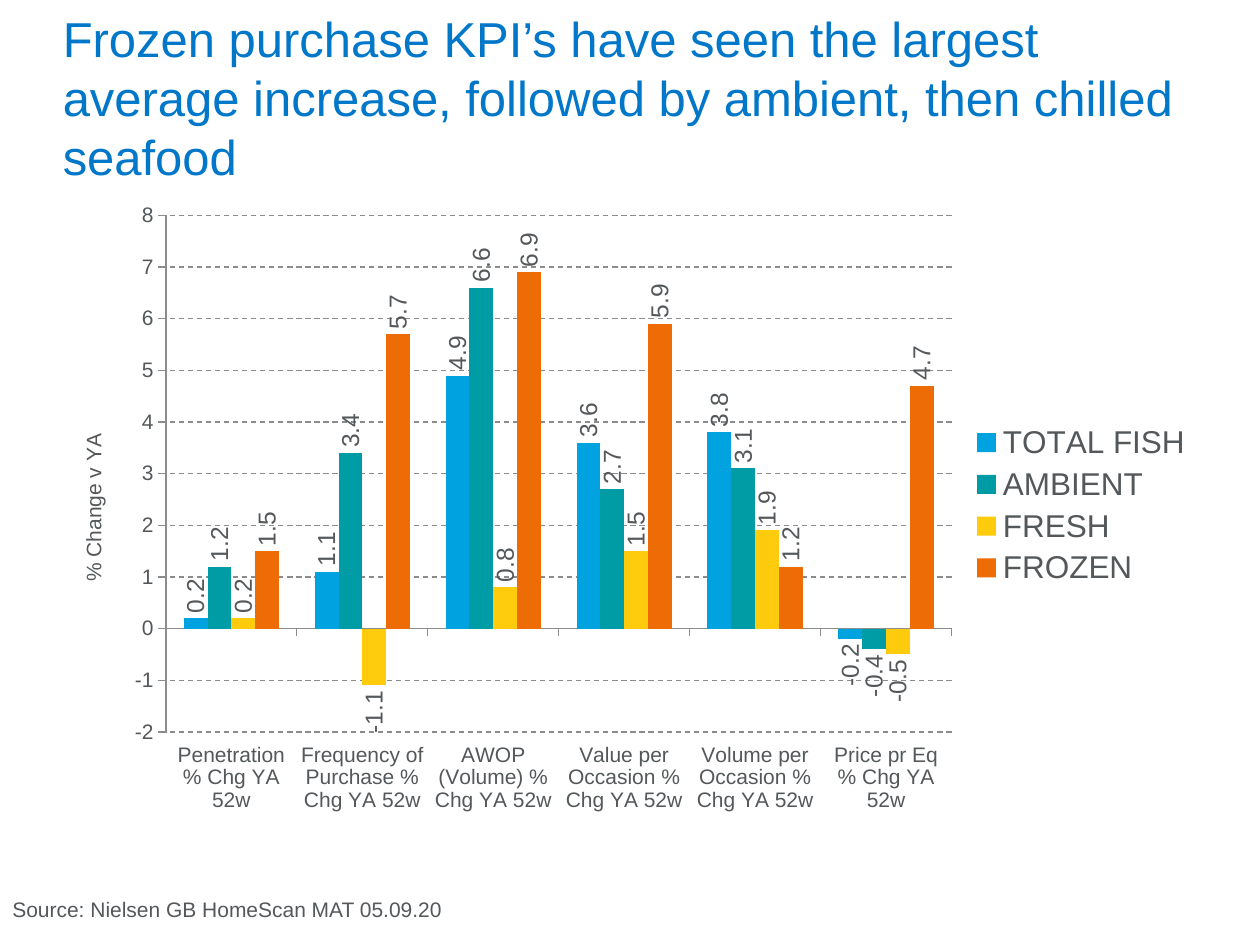
from lxml import etree
from pptx import Presentation
from pptx.chart.data import CategoryChartData
from pptx.dml.color import RGBColor
from pptx.enum.chart import (XL_CHART_TYPE, XL_LABEL_POSITION, XL_LEGEND_POSITION,
                             XL_TICK_LABEL_POSITION, XL_TICK_MARK)
from pptx.enum.dml import MSO_LINE
from pptx.enum.text import MSO_ANCHOR
from pptx.oxml.ns import qn
from pptx.util import Inches, Pt

FONT = "Arial"
BLUE = RGBColor(0x00, 0x77, 0xC8)
TEXT_GRAY = RGBColor(0x54, 0x58, 0x5A)
LINE_GRAY = RGBColor(0x8C, 0x8C, 0x8C)

# Content
TITLE = ("Frozen purchase KPI’s have seen the largest average increase, "
         "followed by ambient, then chilled seafood")
SOURCE = "Source: Nielsen GB HomeScan MAT 05.09.20"
VALUE_TITLE = "% Change v YA"
CATEGORIES = [
    "Penetration % Chg YA 52w", "Frequency of Purchase % Chg YA 52w",
    "AWOP (Volume) % Chg YA 52w", "Value per Occasion % Chg YA 52w",
    "Volume per Occasion % Chg YA 52w", "Price pr Eq % Chg YA 52w",
]
SERIES = [
    ("TOTAL FISH", RGBColor(0x00, 0xA3, 0xE0), (0.2, 1.1, 4.9, 3.6, 3.8, -0.2)),
    ("AMBIENT", RGBColor(0x00, 0x9C, 0xA6), (1.2, 3.4, 6.6, 2.7, 3.1, -0.4)),
    ("FRESH", RGBColor(0xFE, 0xCC, 0x0C), (0.2, -1.1, 0.8, 1.5, 1.9, -0.5)),
    ("FROZEN", RGBColor(0xED, 0x6C, 0x05), (1.5, 5.7, 6.9, 5.9, 1.2, 4.7)),
]
PLOT_LAYOUT = {"x": 0.1, "y": 0.04, "w": 0.68, "h": 0.82}  # fractions of the chart


def style_font(font, size, color=TEXT_GRAY):
    font.name = FONT
    font.size = Pt(size)
    font.bold = False
    font.color.rgb = color


def add_text(slide, text, left, top, width, height, size, color, anchor):
    frame = slide.shapes.add_textbox(
        Inches(left), Inches(top), Inches(width), Inches(height)).text_frame
    frame.word_wrap = True
    frame.vertical_anchor = anchor
    run = frame.paragraphs[0].add_run()
    run.text = text
    style_font(run.font, size, color)


def set_plot_layout(chart):
    plot_area = chart.plots[0]._element.getparent()
    layout = plot_area.find(qn("c:layout"))
    if layout is None:
        layout = etree.Element(qn("c:layout"))
        plot_area.insert(0, layout)
    manual = etree.SubElement(layout, qn("c:manualLayout"))
    settings = [("layoutTarget", "inner"), ("xMode", "edge"), ("yMode", "edge")]
    for tag, value in settings + list(PLOT_LAYOUT.items()):
        etree.SubElement(manual, qn(f"c:{tag}")).set("val", str(value))


def style_axis(axis):
    style_font(axis.tick_labels.font, 12)
    axis.major_tick_mark = XL_TICK_MARK.OUTSIDE
    axis.minor_tick_mark = XL_TICK_MARK.NONE
    axis.format.line.color.rgb = LINE_GRAY


def add_chart(slide):
    data = CategoryChartData(number_format="#,##0.0")
    data.categories = CATEGORIES
    for name, _, values in SERIES:
        data.add_series(name, values)
    chart = slide.shapes.add_chart(
        XL_CHART_TYPE.COLUMN_CLUSTERED, Inches(0.4), Inches(1.51),
        Inches(9.17), Inches(5), data).chart
    chart.has_title = False
    style_font(chart.font, 18)
    set_plot_layout(chart)

    # Legend
    chart.has_legend = True
    chart.legend.position = XL_LEGEND_POSITION.RIGHT
    chart.legend.include_in_layout = False
    style_font(chart.legend.font, 18)

    # Axes
    style_axis(chart.category_axis)
    chart.category_axis.tick_label_position = XL_TICK_LABEL_POSITION.LOW
    value_axis = chart.value_axis
    style_axis(value_axis)
    value_axis.minimum_scale, value_axis.maximum_scale = -2, 8
    value_axis.major_unit = 1
    value_axis.tick_labels.number_format = "General"
    value_axis.tick_labels.number_format_is_linked = False
    grid_line = value_axis.major_gridlines.format.line
    grid_line.color.rgb = LINE_GRAY
    grid_line.width = Pt(0.75)
    grid_line.dash_style = MSO_LINE.DASH
    run = value_axis.axis_title.text_frame.paragraphs[0].add_run()
    run.text = VALUE_TITLE
    style_font(run.font, 12)

    # Columns with upright value labels
    plot = chart.plots[0]
    plot.gap_width, plot.overlap = 150, 0
    plot.vary_by_categories = False
    for series, (_, color, _) in zip(plot.series, SERIES):
        series.invert_if_negative = False
        series.format.fill.solid()
        series.format.fill.fore_color.rgb = color
        labels = series.data_labels
        labels.show_value = True
        labels.number_format = "#,##0.0"
        labels.number_format_is_linked = False
        labels.position = XL_LABEL_POSITION.OUTSIDE_END
        style_font(labels.font, 14)
        body = labels._element.find(qn("c:txPr")).find(qn("a:bodyPr"))
        body.set("rot", "-5400000")
        body.set("vert", "horz")


def main():
    presentation = Presentation()
    presentation.slide_width, presentation.slide_height = Inches(10), Inches(7.5)
    slide = presentation.slides.add_slide(presentation.slide_layouts[6])
    add_text(slide, TITLE, 0.4, 0.3, 9.17, 0.94, 28, BLUE, MSO_ANCHOR.MIDDLE)
    add_chart(slide)
    add_text(slide, SOURCE, 0, 7.07, 10, 0.3, 12, TEXT_GRAY, MSO_ANCHOR.TOP)
    presentation.save("out.pptx")


if __name__ == "__main__":
    main()
